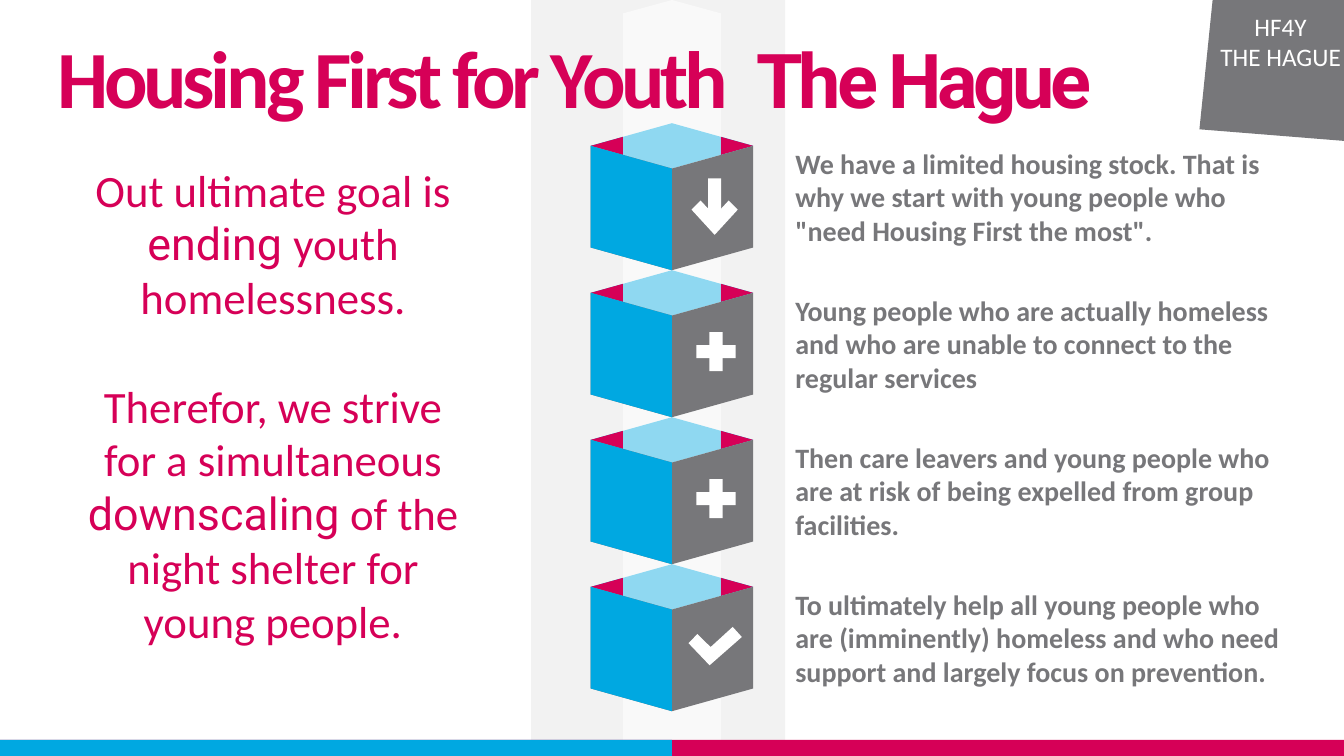
from pptx import Presentation
from pptx.dml.color import RGBColor
from pptx.enum.shapes import MSO_SHAPE
from pptx.enum.text import MSO_ANCHOR, MSO_AUTO_SIZE, PP_ALIGN
from pptx.oxml.ns import qn
from pptx.util import Pt
from lxml import etree

RECTANGLE, DIAMOND = MSO_SHAPE.RECTANGLE, MSO_SHAPE.DIAMOND
LEFT, CENTER = PP_ALIGN.LEFT, PP_ALIGN.CENTER
TOP = MSO_ANCHOR.TOP
GROW = MSO_AUTO_SIZE.SHAPE_TO_FIT_TEXT

PINK = RGBColor(0xD6, 0x00, 0x57)
BLUE = RGBColor(0x00, 0xA8, 0xE1)
GRAY = RGBColor(0x77, 0x77, 0x7A)
PALE = RGBColor(0xF2, 0xF2, 0xF2)
WHITE = RGBColor(0xFF, 0xFF, 0xFF)

TITLE = [[
    ("Housing First for Youth", {"size": 58, "spacing": -3}),
    (" ", {"size": 58, "spacing": 7}),
    ("The Hague", {"size": 54, "spacing": -3, "font": "Roboto"}),
]]
GOAL = [
    [("Out ultimate goal is ", {}), ("ending ", {"font": "Roboto"}), ("youth homelessness.", {})],
    [("Therefor, we strive for a simultaneous ", {}), ("downscaling", {"font": "Roboto"}),
     (" of the night shelter for young people.", {})],
]
STEPS = [
    'We have a limited housing stock. That is why we start with young people who "need Housing First the most".',
    "Young people who are actually homeless and who are unable to connect to the regular services",
    "Then care leavers and young people who are at risk of being expelled from group facilities.",
    "To ultimately help all young people who are (imminently) homeless and who need support "
    "and largely focus on prevention.",
]
BADGE = [[("HF4Y", {})], [("THE HAGUE", {})]]

WIDTH, HEIGHT = 960, 540
MIDDLE = WIDTH / 2
CUBE_TOP, CUBE_PITCH = 88, 105
CUBE_HALF, BEAM_HALF = 58, 35
LID_HALF, WALL = 16.2, 72.6
CORNER = LID_HALF * (CUBE_HALF - BEAM_HALF) / CUBE_HALF
BEAM_SHOULDER = 9.6
ICON_X, ICON_Y = 511.5, 146.2
PLUS_LENGTH, PLUS_THICK = 28, 9.4
ARROW_X, ARROW_TIP = 510.5, 167.8
ARROW_HEAD = [(0, 0), (16.5, -18), (10, -24.5), (0, -13.7), (-10, -24.5), (-16.5, -18)]
CHECK = [(523.4, 447.8), (507.6, 462.2), (498.2, 452.9), (491.8, 459.4), (506.9, 475.2), (529.9, 455)]
FOOTER_HEIGHT = 11.5

deck = Presentation()
deck.slide_width, deck.slide_height = Pt(WIDTH), Pt(HEIGHT)
page = deck.slides.add_slide(deck.slide_layouts[1])


def paint(shape, color):
    shape.shadow.inherit = False
    shape.fill.solid()
    shape.fill.fore_color.rgb = color
    shape.line.fill.background()
    return shape


def draw_block(shapes, left, top, width, height, color, kind=RECTANGLE):
    return paint(shapes.add_shape(kind, Pt(left), Pt(top), Pt(width), Pt(height)), color)


def draw_outline(shapes, color, *contours):
    builder = None
    for contour in contours:
        points = [(Pt(x), Pt(y)) for x, y in contour]
        if builder is None:
            builder = shapes.build_freeform(*points[0])
        else:
            builder.move_to(*points[0])
        builder.add_line_segments(points[1:], close=True)
    return paint(builder.convert_to_shape(), color)


def place(shape, left, top, width, height):
    shape.left, shape.top, shape.width, shape.height = Pt(left), Pt(top), Pt(width), Pt(height)


def write(shape, paragraphs, size=20, color=PINK, bold=False, align=LEFT, gap=0, wrap=True):
    frame = shape.text_frame
    frame.word_wrap = wrap
    frame.auto_size = GROW
    frame.vertical_anchor = TOP
    for index, spans in enumerate(paragraphs):
        para = frame.add_paragraph() if index else frame.paragraphs[0]
        para.alignment = align
        para.space_before = Pt(gap if index else 0)
        for text, style in spans:
            span = para.add_run()
            span.text = text
            span.font.name = style.get("font", "Calibri")
            span.font.size = Pt(style.get("size", size))
            span.font.bold = bold
            span.font.color.rgb = color
            if "spacing" in style:
                span._r.get_or_add_rPr().set("spc", str(style["spacing"] * 100))


def add_text(left, top, width, height, paragraphs, **style):
    box = page.shapes.add_textbox(Pt(left), Pt(top), Pt(width), Pt(height))
    write(box, paragraphs, **style)


def draw_plus(y):
    plus = page.shapes.add_group_shape().shapes
    for width, height in [(PLUS_LENGTH, PLUS_THICK), (PLUS_THICK, PLUS_LENGTH)]:
        draw_block(plus, ICON_X - width / 2, y - height / 2, width, height, WHITE)


draw_block(page.shapes, 379.4, 0, 181.4, HEIGHT, PALE)

tower = page.shapes.add_group_shape().shapes
left, right = MIDDLE - CUBE_HALF, MIDDLE + CUBE_HALF
beam_left, beam_right = MIDDLE - BEAM_HALF, MIDDLE + BEAM_HALF
cube_tops = [CUBE_TOP + CUBE_PITCH * index for index in range(len(STEPS))]

for top in cube_tops:
    rim = top + LID_HALF
    draw_outline(tower, BLUE, [(right, rim), (MIDDLE, top), (left, rim), (MIDDLE, rim + LID_HALF)])
    draw_outline(tower, PINK, *[
        [(inner, rim - CORNER), (outer, rim), (inner, rim + CORNER)]
        for inner, outer in [(beam_left, left), (beam_right, right)]
    ])

beam = draw_outline(tower, WHITE, [
    (beam_left, BEAM_SHOULDER), (MIDDLE, 0), (beam_right, BEAM_SHOULDER),
    (beam_right, HEIGHT), (beam_left, HEIGHT),
])
beam_color = beam.element.spPr.find(qn("a:solidFill"))[0]
etree.SubElement(beam_color, qn("a:alpha")).set("val", "56000")

for top in cube_tops:
    rim = top + LID_HALF
    fold, base = rim + LID_HALF, rim + WALL
    foot = base + LID_HALF
    draw_outline(tower, GRAY, [(left, base), (MIDDLE, foot), (right, base),
                               (right, rim), (MIDDLE, fold), (left, rim)])
    draw_outline(tower, BLUE, [(left, rim), (left, base), (MIDDLE, foot), (MIDDLE, fold)])

for index, step in enumerate(STEPS):
    add_text(561, 101 + CUBE_PITCH * index, 373, 80, [[(step, {})]], color=GRAY, bold=True)

goal = page.placeholders[1]
place(goal, 54.7, 112.3, 280.8, 356.4)
write(goal, GOAL, size=32, align=CENTER, gap=39)
for para in goal.text_frame.paragraphs:
    properties = para._p.get_or_add_pPr()
    properties.set("marL", "0")
    properties.set("indent", "0")
    etree.SubElement(properties, qn("a:buNone"))

footer = page.shapes.add_group_shape().shapes
for width, color in [(WIDTH, PINK), (MIDDLE, BLUE)]:
    draw_block(footer, 0, HEIGHT - FOOTER_HEIGHT, width, FOOTER_HEIGHT, color)

title = page.shapes.title
place(title, 17.3, 15.8, 786.2, 77.8)
write(title, TITLE, bold=True, align=CENTER)
title.element.getparent().append(title.element)

badge = draw_block(page.shapes, 838.8, -47.5, 167, 170.6, GRAY, DIAMOND)
badge.rotation = 50.2
add_text(864, 4.3, 101.5, 72.7, BADGE, size=18, color=WHITE, align=CENTER, wrap=False)

for index in (1, 2):
    draw_plus(ICON_Y + CUBE_PITCH * index)
draw_outline(page.shapes, WHITE, [(ARROW_X + x, ARROW_TIP + y) for x, y in ARROW_HEAD])
draw_outline(page.shapes, WHITE, CHECK)
draw_block(page.shapes, ARROW_X - PLUS_THICK / 2, 127.4, PLUS_THICK, 27.4, WHITE)

deck.save("out.pptx")
